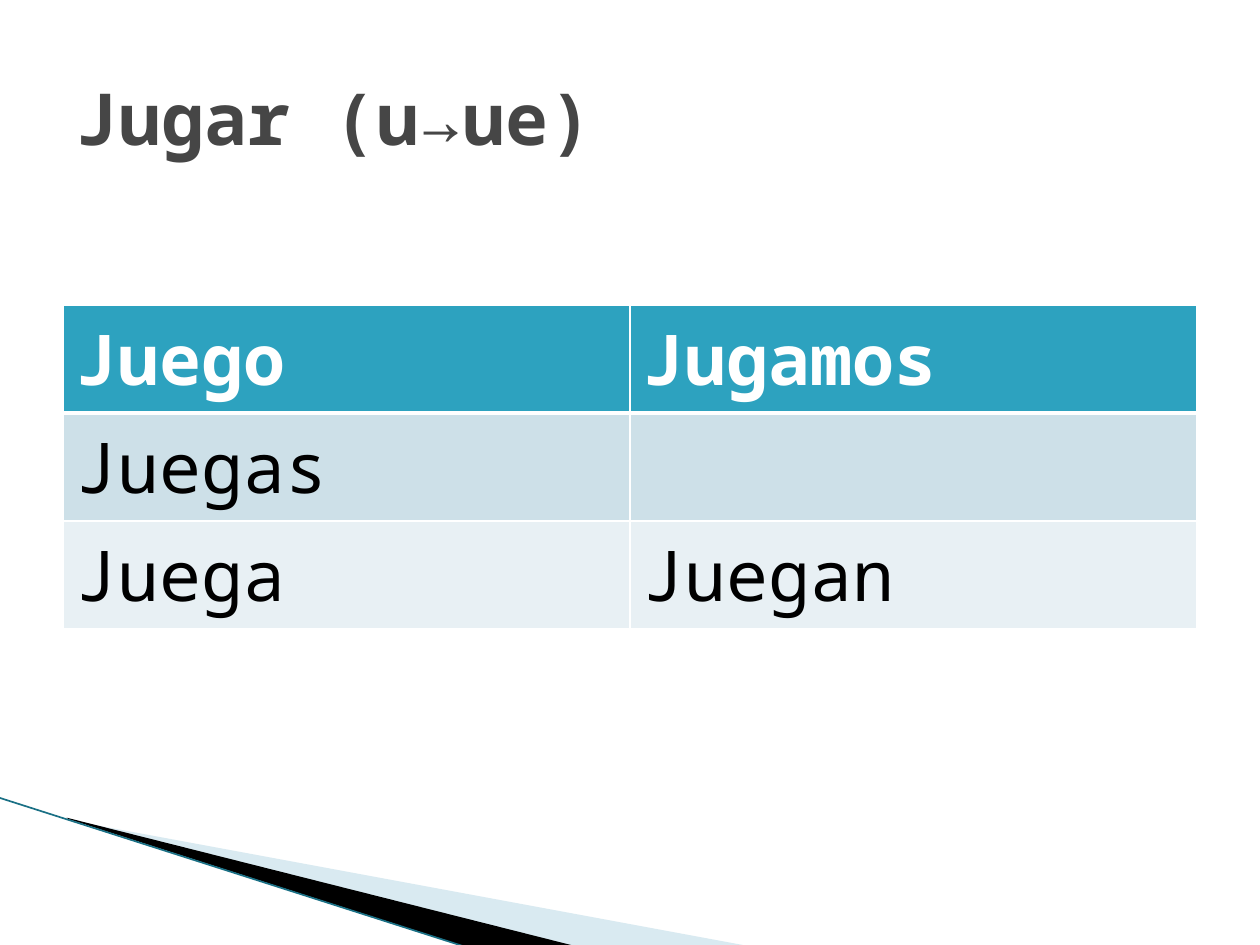
import pptx
import pptx.util
import pptx.dml.color
import pptx.enum.shapes
import pptx.enum.text
import pptx.oxml
import pptx.oxml.ns
from lxml import etree

Inches = pptx.util.Inches
Pt = pptx.util.Pt
RGBColor = pptx.dml.color.RGBColor
qn = pptx.oxml.ns.qn

FONT = "Noto Sans Mono"
WHITE = RGBColor(0xFF, 0xFF, 0xFF)
BLACK = RGBColor(0x00, 0x00, 0x00)
TITLE_GREY = RGBColor(0x46, 0x46, 0x46)
HEADER_TEAL = RGBColor(0x2D, 0xA2, 0xBF)
BAND_BLUE = RGBColor(0xCD, 0xE0, 0xE8)
BAND_PALE = RGBColor(0xE8, 0xF0, 0xF4)
WEDGE_BLUE = RGBColor(0xA0, 0xCB, 0xDC)
EDGE_TEAL = RGBColor(0x1A, 0x70, 0x85)


def write_text(frame, text, size, color, bold=False):
    para = frame.paragraphs[0]
    para.alignment = pptx.enum.text.PP_ALIGN.LEFT
    span = para.add_run()
    span.text = text
    span.font.name = FONT
    span.font.size = Pt(size)
    span.font.bold = bold
    span.font.color.rgb = color


def add_border(cell, side, width):
    """Add a white border; side is L, R, T or B."""
    line = etree.SubElement(cell._tc.get_or_add_tcPr(), qn("a:ln" + side), w=str(Pt(width)))
    fill = etree.SubElement(line, qn("a:solidFill"))
    etree.SubElement(fill, qn("a:srgbClr"), val=str(WHITE))


deck = pptx.Presentation()
deck.slide_width = Inches(10)
deck.slide_height = Inches(7.5)
page = deck.slides.add_slide(deck.slide_layouts[5])

# Corner decoration
wedges = [
    (WEDGE_BLUE, 40, [(0.55, 6.51), (5.95, 7.51), (4.56, 7.51), (0.55, 6.5)]),
    (BLACK, 100, [(0.53, 6.49), (4.57, 7.51), (3.72, 7.52), (0.54, 6.5)]),
]
for color, opacity, points in wedges:
    corners = [(Inches(x), Inches(y)) for x, y in points]
    builder = page.shapes.build_freeform(*corners[0])
    builder.add_line_segments(corners[1:], close=True)
    wedge = builder.convert_to_shape()
    wedge.shadow.inherit = False
    wedge.fill.solid()
    wedge.fill.fore_color.rgb = color
    wedge.line.fill.background()
    if opacity < 100:
        tint = wedge._element.spPr.find(".//" + qn("a:srgbClr"))
        etree.SubElement(tint, qn("a:alpha"), val=str(opacity * 1000))

edge = page.shapes.add_connector(
    pptx.enum.shapes.MSO_CONNECTOR.STRAIGHT,
    Inches(-0.01), Inches(6.33), Inches(3.71), Inches(7.52))
edge.line.color.rgb = EDGE_TEAL
edge.line.width = Pt(0.95)
etree.SubElement(edge._element.spPr, qn("a:effectLst"))

# Title
title = page.shapes.title
title.left, title.top = Inches(0.5), Inches(0.3)
title.width, title.height = Inches(9), Inches(1.25)
title.text_frame.vertical_anchor = pptx.enum.text.MSO_ANCHOR.MIDDLE
write_text(title.text_frame, "Jugar (u→ue)", size=41, color=TITLE_GREY, bold=True)

# Conjugation table
rows = [
    (["Juego", "Jugamos"], HEADER_TEAL),
    (["Juegas", ""], BAND_BLUE),
    (["Juega", "Juegan"], BAND_PALE),
]
table = page.shapes.add_table(
    len(rows), 2, Inches(0.5), Inches(2.42), Inches(9), Inches(2.55)).table
for row, (words, fill_color) in enumerate(rows):
    is_header = row == 0
    for column, word in enumerate(words):
        cell = table.cell(row, column)
        for side in "LRTB":
            thick = (row, side) in [(0, "B"), (1, "T")]
            add_border(cell, side, 3 if thick else 1)
        cell.fill.solid()
        cell.fill.fore_color.rgb = fill_color
        if word:
            write_text(cell.text_frame, word, size=40,
                       color=WHITE if is_header else BLACK, bold=is_header)

deck.save("out.pptx")
